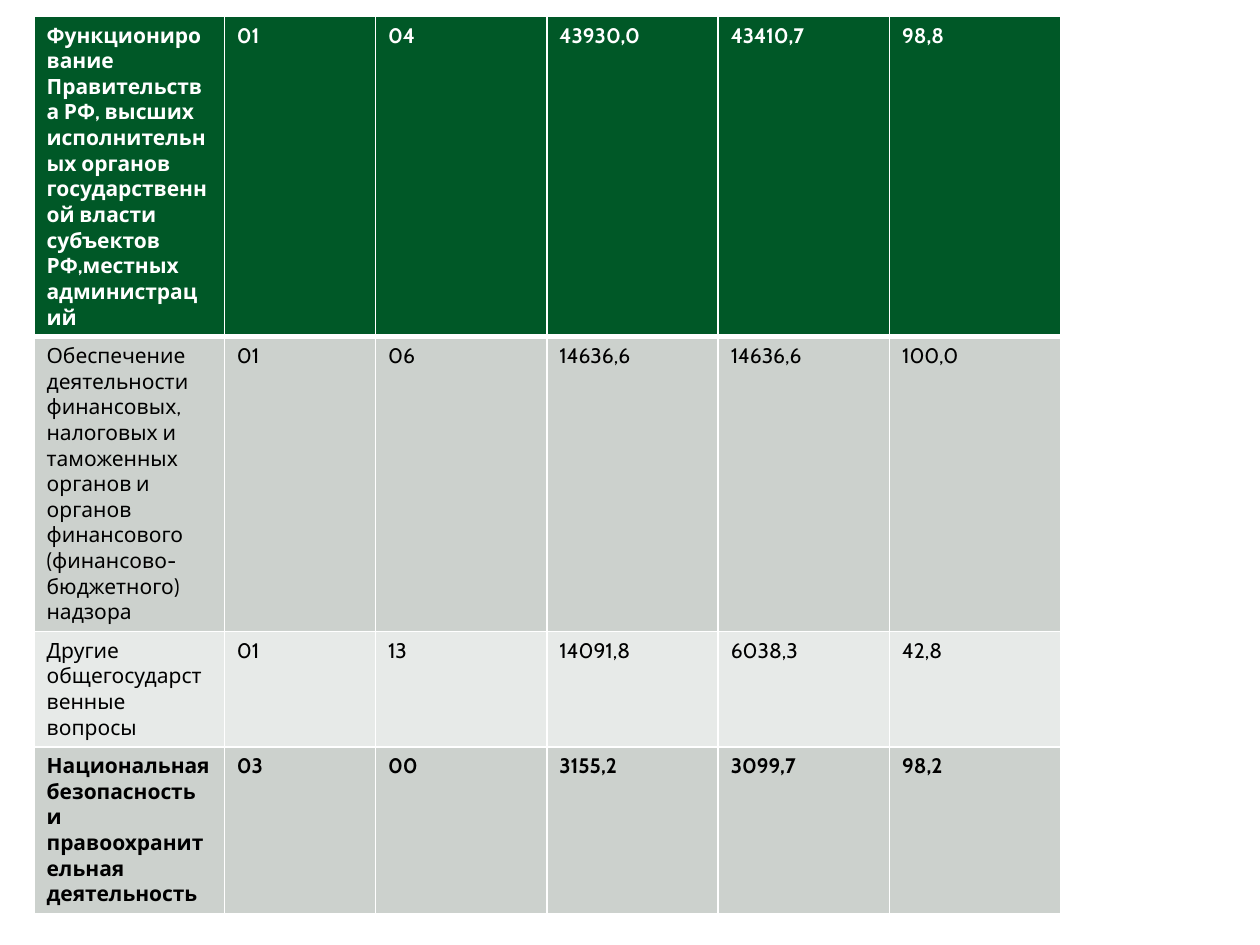
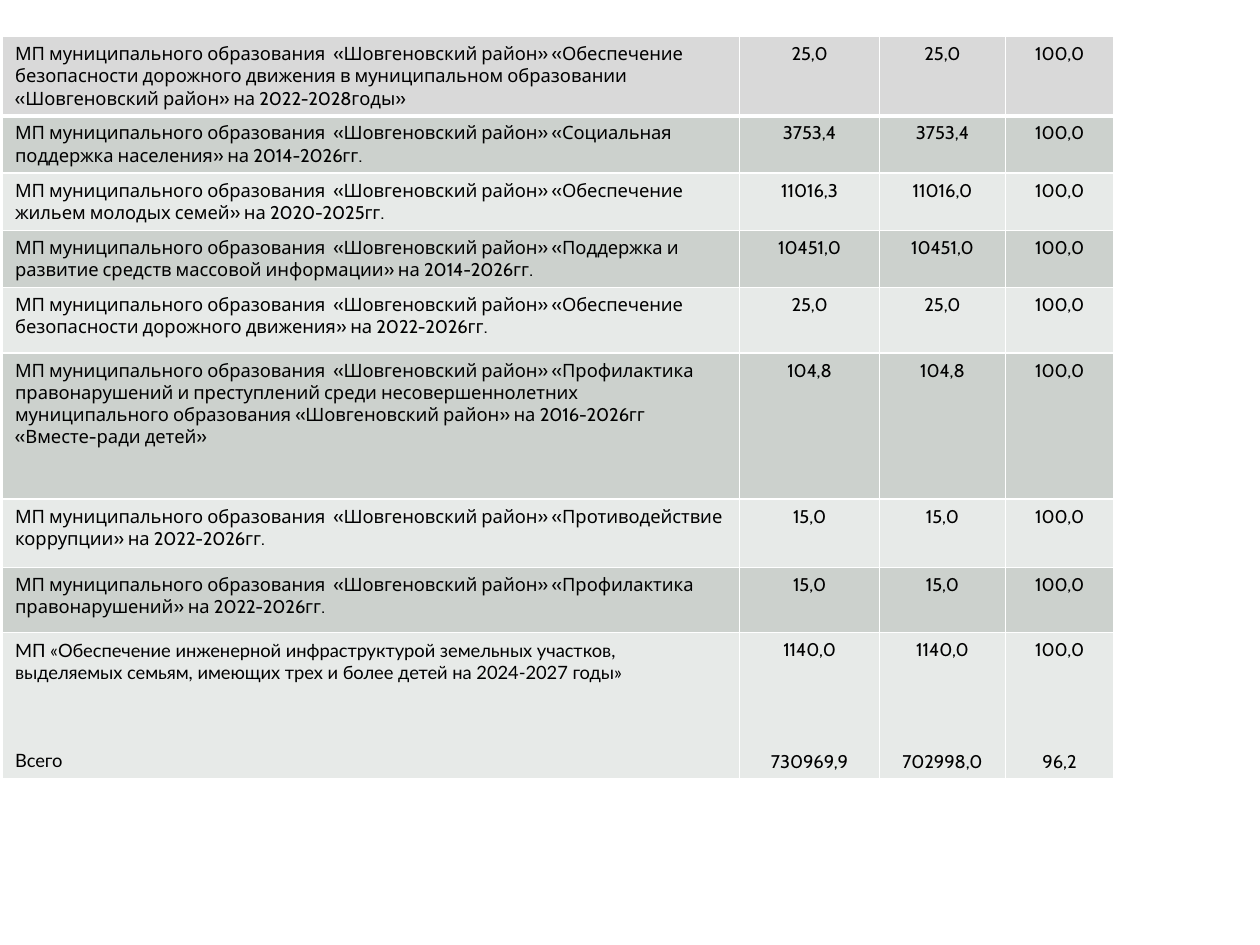
"""Build two budget execution slides, each holding one table."""
from dataclasses import dataclass

from lxml.etree import SubElement
from pptx import Presentation
from pptx.dml.color import RGBColor
from pptx.enum.text import PP_ALIGN
from pptx.oxml.ns import qn
from pptx.util import Inches, Pt


@dataclass(frozen=True)
class Theme:
    font: str = "Cabin"
    total_font: str = "Lato"
    white: str = "FFFFFF"
    black: str = "000000"
    green: str = "005827"
    grey: str = "D9D9D9"
    bands: tuple = ("E7EAE8", "CCD1CD")
    section_size: float = 12
    programme_size: float = 10.5
    line: float = 1
    header_line: float = 3


THEME = Theme()


def add_borders(cell, row_index):
    """Draw the white grid, with a heavier line under the first row."""
    heavy_edge = {0: "lnB", 1: "lnT"}.get(row_index)
    for edge in ("lnL", "lnR", "lnT", "lnB"):
        width = THEME.header_line if edge == heavy_edge else THEME.line
        border = SubElement(cell._tc.get_or_add_tcPr(), qn(f"a:{edge}"), w=str(Pt(width)))
        SubElement(SubElement(border, qn("a:solidFill")), qn("a:srgbClr"), val=THEME.white)


def add_budget_table(slide, left, top, columns, heights, records, size, header_fill, number_align):
    """Place a banded table and return it."""
    frame = slide.shapes.add_table(
        len(records), len(columns), Inches(left), Inches(top),
        Inches(sum(columns)), Inches(sum(heights)))
    table = frame.table
    for column, width in zip(table.columns, columns):
        column.width = Inches(width)
    for row_index, (row, height, record) in enumerate(zip(table.rows, heights, records)):
        row.height = Inches(height)
        fill = THEME.bands[row_index % 2] if row_index else header_fill
        for column_index, (cell, text) in enumerate(zip(row.cells, record)):
            add_borders(cell, row_index)
            cell.fill.solid()
            cell.fill.fore_color.rgb = RGBColor.from_string(fill)
            cell.text_frame.text = text
            for paragraph in cell.text_frame.paragraphs:
                paragraph.alignment = number_align if column_index else PP_ALIGN.LEFT
                for run in paragraph.runs:
                    run.font.name = THEME.font
                    run.font.size = Pt(size)
                    run.font.bold = False
                    run.font.color.rgb = RGBColor.from_string(THEME.black)
    return table


deck = Presentation()
deck.slide_width, deck.slide_height = Inches(10), Inches(7.5)
blank = deck.slide_layouts[6]

sections = [
    ("Функционирование Правительства РФ, высших исполнительных органов государственной "
     "власти субъектов РФ,местных администраций", "01", "04", "43930,0", "43410,7", "98,8"),
    ("Обеспечение деятельности финансовых, налоговых и таможенных органов и органов "
     "финансового (финансово-бюджетного) надзора", "01", "06", "14636,6", "14636,6", "100,0"),
    ("Другие общегосударственные вопросы", "01", "13", "14091,8", "6038,3", "42,8"),
    ("Национальная безопасность и правоохранительная деятельность",
     "03", "00", "3155,2", "3099,7", "98,2"),
]
section_table = add_budget_table(
    deck.slides.add_slide(blank), 0.27, 0.13, [1.51, 1.2] + [1.36] * 4,
    [2.54, 2.33, 0.91, 1.32], sections, THEME.section_size, THEME.green, PP_ALIGN.LEFT)
for row_index, colour in ((0, THEME.white), (3, THEME.black)):
    for cell in section_table.rows[row_index].cells:
        figure = cell.text_frame.paragraphs[0].runs[0]
        figure.font.bold = True
        figure.font.color.rgb = RGBColor.from_string(colour)

district = "МП муниципального образования  «Шовгеновский район» "
programmes = [
    (district + "«Обеспечение  безопасности дорожного движения в муниципальном образовании "
     "«Шовгеновский район» на 2022-2028годы»", "25,0", "25,0", "100,0"),
    (district + "«Социальная поддержка населения» на 2014-2026гг.", "3753,4", "3753,4", "100,0"),
    (district + "«Обеспечение жильем молодых семей» на 2020-2025гг.",
     "11016,3", "11016,0", "100,0"),
    (district + "«Поддержка и развитие средств массовой информации» на 2014-2026гг.",
     "10451,0", "10451,0", "100,0"),
    (district + "«Обеспечение безопасности дорожного движения» на 2022-2026гг.",
     "25,0", "25,0", "100,0"),
    (district + "«Профилактика правонарушений и преступлений среди несовершеннолетних "
     "муниципального образования «Шовгеновский район» на 2016-2026гг «Вместе-ради детей»",
     "104,8", "104,8", "100,0"),
    (district + "«Противодействие коррупции» на 2022-2026гг.", "15,0", "15,0", "100,0"),
    (district + "«Профилактика правонарушений» на 2022-2026гг.", "15,0", "15,0", "100,0"),
    ("МП «Обеспечение инженерной инфраструктурой земельных участков, выделяемых семьям, "
     "имеющих трех и более детей на 2024-2027 годы»\nВсего",
     "1140,0\n730969,9", "1140,0\n702998,0", "100,0\n96,2"),
]
programme_table = add_budget_table(
    deck.slides.add_slide(blank), 0.02, 0.29, [5.85, 1.11, 1, 0.86],
    [0.62, 0.45, 0.45, 0.45, 0.52, 1.16, 0.54, 0.52, 1.16], programmes,
    THEME.programme_size, THEME.grey, PP_ALIGN.CENTER)
for cell, gap in zip(programme_table.rows[8].cells, (38, 51, 51, 51)):
    cell.text_frame.paragraphs[1].space_before = Pt(gap)
for paragraph in programme_table.cell(8, 0).text_frame.paragraphs:
    paragraph.runs[0].font.name = THEME.total_font

for cell in programme_table.rows[8].cells:
    cell.fill.fore_color.rgb = RGBColor.from_string(THEME.bands[0])

deck.save("out.pptx")
